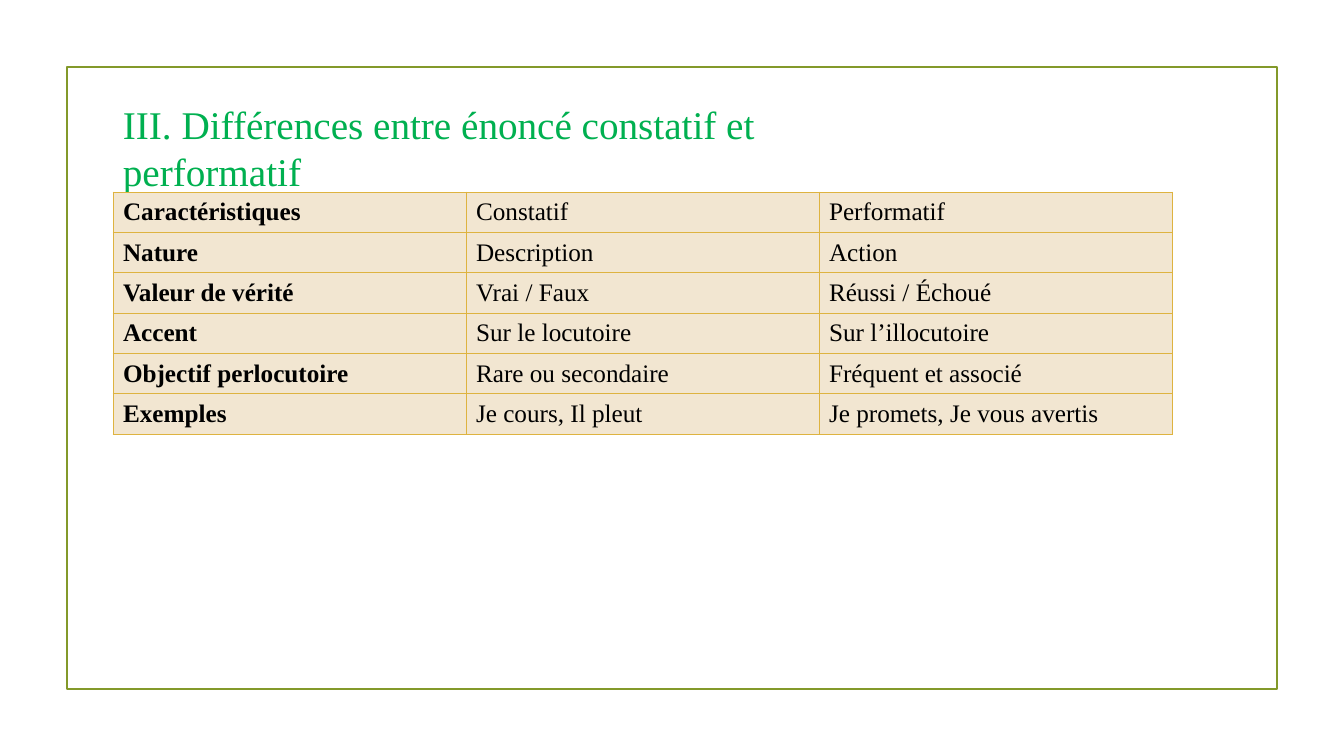
from lxml import etree
from pptx import Presentation
from pptx.dml.color import RGBColor
from pptx.enum.shapes import MSO_SHAPE
from pptx.enum.text import MSO_ANCHOR
from pptx.oxml.ns import qn
from pptx.util import Emu, Pt

RECTANGLE = MSO_SHAPE.RECTANGLE
MIDDLE = MSO_ANCHOR.MIDDLE
EMU_PER_PX = 914400 / 100.8
FONT = "Times New Roman"
COLORS = {
    "frame": "83992A",
    "title": "00B050",
    "text": "000000",
    "cell": "F2E6D1",
    "border": "DEB340",
}
COMPARISON = [
    ("Caractéristiques", "Constatif", "Performatif"),
    ("Nature", "Description", "Action"),
    ("Valeur de vérité", "Vrai / Faux", "Réussi / Échoué"),
    ("Accent", "Sur le locutoire", "Sur l’illocutoire"),
    ("Objectif perlocutoire", "Rare ou secondaire", "Fréquent et associé"),
    ("Exemples", "Je cours, Il pleut", "Je promets, Je vous avertis"),
]


def px(length):
    return Emu(round(length * EMU_PER_PX))


def color(name):
    return RGBColor.from_string(COLORS[name])


def style_font(paragraph, size, color_name, bold=False):
    font = paragraph.font
    font.name, font.size, font.bold = FONT, Pt(size), bold
    font.color.rgb = color(color_name)


def add_frame(slide, box):
    frame = slide.shapes.add_shape(RECTANGLE, *map(px, box))
    frame.shadow.inherit = False
    frame.fill.background()
    frame.line.color.rgb = color("frame")
    frame.line.width = Pt(1.25)


def add_title(slide, box, wording):
    title = slide.shapes.add_textbox(*map(px, box)).text_frame
    title.word_wrap = True
    title.text = wording
    style_font(title.paragraphs[0], 28, "title")


def add_borders(cell):
    """Outline a cell; called before its fill, which must follow the lines."""
    properties = cell._tc.get_or_add_tcPr()
    for side in ("lnL", "lnR", "lnT", "lnB"):
        line = etree.SubElement(properties, qn(f"a:{side}"), w=str(Pt(0.75)))
        fill = etree.SubElement(line, qn("a:solidFill"))
        etree.SubElement(fill, qn("a:srgbClr"), val=COLORS["border"])


def add_comparison(slide, box, rows):
    table = slide.shapes.add_table(len(rows), len(rows[0]), *map(px, box)).table
    table.first_row = table.horz_banding = False
    for row_index, row in enumerate(rows):
        for column_index, wording in enumerate(row):
            cell = table.cell(row_index, column_index)
            add_borders(cell)
            cell.fill.solid()
            cell.fill.fore_color.rgb = color("cell")
            cell.vertical_anchor = MIDDLE
            cell.text = wording
            style_font(cell.text_frame.paragraphs[0], 18, "text",
                       bold=column_index == 0)


def add_differences_slide(presentation):
    slide = presentation.slides.add_slide(presentation.slide_layouts[6])
    add_frame(slide, (67, 67, 1210, 622))
    add_title(slide, (113, 95, 830, 57),
              "III. Différences entre énoncé constatif et performatif")
    add_comparison(slide, (113, 192, 1059, 242), COMPARISON)


def main():
    presentation = Presentation()
    presentation.slide_width, presentation.slide_height = px(1344), px(756)
    add_differences_slide(presentation)
    presentation.save("out.pptx")


if __name__ == "__main__":
    main()
